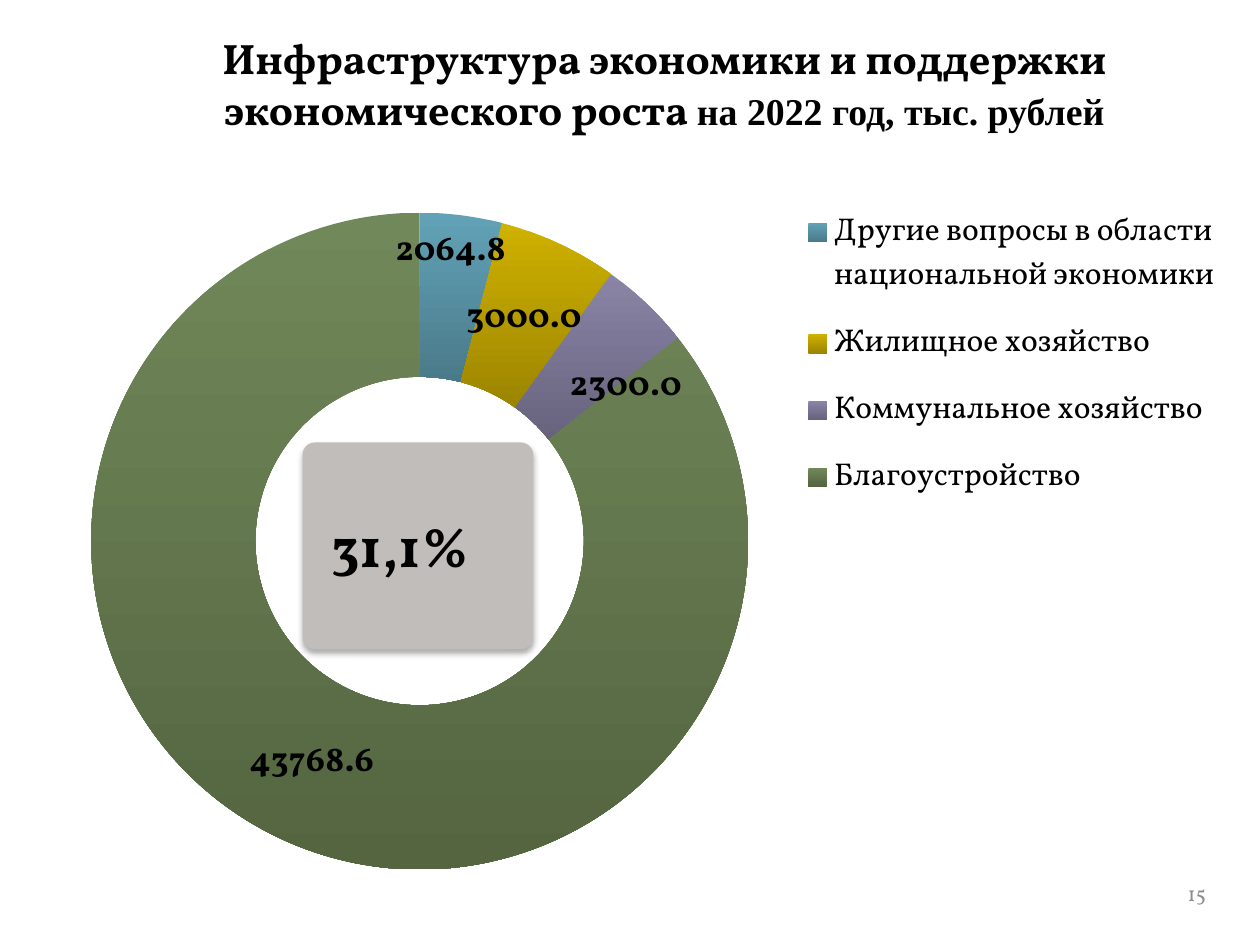
from dataclasses import dataclass

from lxml.etree import SubElement
from pptx import Presentation
from pptx.chart.data import CategoryChartData
from pptx.dml.color import RGBColor
from pptx.enum.chart import XL_CHART_TYPE as ChartType, XL_LEGEND_POSITION as LegendPosition
from pptx.enum.shapes import MSO_SHAPE as Shape
from pptx.enum.text import MSO_ANCHOR as Anchor, MSO_AUTO_SIZE as AutoSize, PP_ALIGN as Align
from pptx.oxml import parse_xml
from pptx.oxml.ns import nsdecls, qn
from pptx.util import Cm, Pt


@dataclass(frozen=True)
class Theme:
    font: str = "Vollkorn"
    second_font: str = "Times New Roman"
    text: str = "000000"
    muted: str = "8C8C8C"
    panel: str = "C0BDBA"
    title_size: float = 24.3
    subtitle_size: float = 21.6
    share_size: float = 32
    legend_size: float = 18
    label_size: float = 20
    number_size: float = 12


THEME = Theme()

# Category, value, gradient top and bottom, label shift as a share of the chart
SECTORS = [
    ("Другие вопросы в области национальной экономики", 2064.8, "62A2B7", "4A7A8A", (0, -0.06)),
    ("Жилищное хозяйство", 3000, "CFB100", "9C8500", None),
    ("Коммунальное хозяйство", 2300, "8A84A6", "67637D", (0.03, 0.03)),
    ("Благоустройство", 43768.6, "71885A", "546540", None),
]


def format_font(font, size, name=THEME.font, color=THEME.text, bold=False):
    font.size, font.name, font.bold = Pt(size), name, bold
    font.color.rgb = RGBColor.from_string(color)


def add_text(paragraph, text, align=Align.LEFT, **font_format):
    paragraph.alignment = align
    run = paragraph.add_run()
    run.text = text
    format_font(run.font, **font_format)


def place(shape, left, top, width, height):
    shape.left, shape.top, shape.width, shape.height = map(Cm, (left, top, width, height))


def add_text_box(slide, box, text, anchor=Anchor.TOP, **text_format):
    frame = slide.shapes.add_textbox(*map(Cm, box)).text_frame
    frame.word_wrap = True
    frame.vertical_anchor = anchor
    add_text(frame.paragraphs[0], text, **text_format)


def make_layout(**values):
    """Build a manual chart layout from its named settings, in schema order."""
    layout = parse_xml(f"<c:layout {nsdecls('c')}/>")
    manual = SubElement(layout, qn("c:manualLayout"))
    for name, value in values.items():
        SubElement(manual, qn(f"c:{name}")).set("val", str(value))
    return layout


def set_layout(parent, layout, position):
    for old in parent.findall(qn("c:layout")):
        parent.remove(old)
    parent.insert(position, layout)


def fill_title(slide):
    title = slide.shapes.title
    place(title, 1.98, 0.79, 22.83, 1.78)
    frame = title.text_frame
    frame.auto_size = AutoSize.NONE
    frame.vertical_anchor = Anchor.MIDDLE
    paragraph = frame.paragraphs[0]
    add_text(paragraph, "Инфраструктура экономики и поддержки экономического роста ",
             align=Align.CENTER, size=THEME.title_size, bold=True)
    add_text(paragraph, "на 2022 год, тыс. рублей", align=Align.CENTER,
             size=THEME.subtitle_size, name=THEME.second_font, bold=True)


def format_sector(series, index, top, bottom, shift):
    point = series.points[index]
    fill = point.format.fill
    fill.gradient()
    fill.gradient_angle = 270
    for stop, color in zip(fill.gradient_stops, (top, bottom)):
        stop.color.rgb = RGBColor.from_string(color)
    point.format.line.fill.background()
    if shift:
        format_font(point.data_label.font, THEME.label_size, bold=True)
        label = series._element.xpath(f"c:dLbls/c:dLbl[c:idx/@val='{index}']")[0]
        set_layout(label, make_layout(x=shift[0], y=shift[1]), 1)
        label.insert(2, parse_xml(
            f'<c:numFmt {nsdecls("c")} formatCode="0.0" sourceLinked="0"/>'))


def add_doughnut(slide):
    data = CategoryChartData()
    data.categories = [sector[0] for sector in SECTORS]
    data.add_series("Series 1", [sector[1] for sector in SECTORS])
    box = map(Cm, (0.58, 3.18, 24.21, 15.29))
    chart = slide.shapes.add_chart(ChartType.DOUGHNUT, *box, data).chart
    chart.has_title = False
    format_font(chart.font, THEME.legend_size)

    # Legend
    chart.has_legend = True
    legend = chart.legend
    legend.position = LegendPosition.RIGHT
    legend.include_in_layout = False
    format_font(legend.font, THEME.legend_size)
    set_layout(legend._element, make_layout(
        xMode="edge", yMode="edge", x=0.65, y=0.04, w=0.35, h=0.44), 1)

    # Ring and labels
    plot = chart.plots[0]
    plot.vary_by_categories = True
    plot._element.find(qn("c:holeSize")).set("val", "50")
    set_layout(plot._element.getparent(), make_layout(
        layoutTarget="inner", xMode="edge", yMode="edge",
        x=0.052, y=0.034, w=0.547, h=0.943), 0)
    series = plot.series[0]
    labels = series.data_labels
    labels.show_value = True
    labels.number_format, labels.number_format_is_linked = "0.0", False
    format_font(labels.font, THEME.label_size, bold=True)
    for index, (_, _, top, bottom, shift) in enumerate(SECTORS):
        format_sector(series, index, top, bottom, shift)


def add_panel(slide):
    panel = slide.shapes.add_shape(Shape.ROUNDED_RECTANGLE, *map(Cm, (6.1, 8.92, 4.65, 4.17)))
    panel.adjustments[0] = 0.06
    panel.fill.solid()
    panel.fill.fore_color.rgb = RGBColor.from_string(THEME.panel)
    panel.line.fill.background()
    # Soft shadow straight below
    panel.shadow.inherit = False
    effects = panel._element.spPr.find(qn("a:effectLst"))
    effects.append(parse_xml(
        f'<a:outerShdw {nsdecls("a")} blurRad="{Pt(3.5)}" dist="{Pt(2.2)}" dir="5400000" '
        'rotWithShape="0"><a:srgbClr val="000000"><a:alpha val="32000"/></a:srgbClr>'
        '</a:outerShdw>'))


def main():
    presentation = Presentation()
    presentation.slide_width, presentation.slide_height = Cm(25.4), Cm(19.05)
    slide = presentation.slides.add_slide(presentation.slide_layouts[5])
    fill_title(slide)
    add_text_box(slide, (18.21, 17.35, 6.35, 1.32), "15", anchor=Anchor.MIDDLE,
                 align=Align.RIGHT, size=THEME.number_size, color=THEME.muted)
    add_doughnut(slide)
    # Share in the centre of the ring
    add_panel(slide)
    add_text_box(slide, (6.43, 10.19, 3.96, 1.63), "31,1%", size=THEME.share_size, bold=True)
    presentation.save("out.pptx")


if __name__ == "__main__":
    main()
